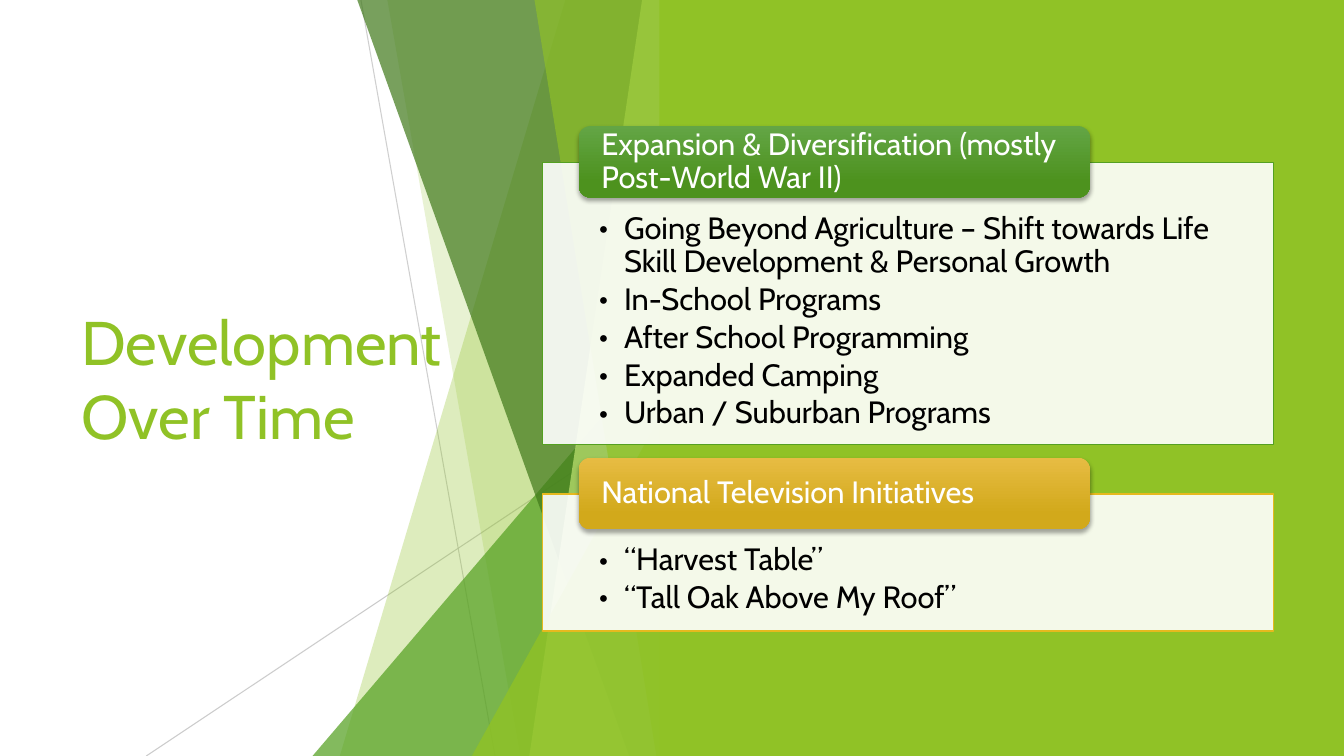
from lxml import etree
from pptx import Presentation
from pptx.dml.color import RGBColor
from pptx.enum.shapes import MSO_CONNECTOR, MSO_SHAPE
from pptx.enum.text import MSO_ANCHOR, PP_ALIGN
from pptx.oxml.ns import qn
from pptx.util import Inches, Pt

STRAIGHT = MSO_CONNECTOR.STRAIGHT
RECTANGLE, ROUNDED = MSO_SHAPE.RECTANGLE, MSO_SHAPE.ROUNDED_RECTANGLE
TOP, MIDDLE = MSO_ANCHOR.TOP, MSO_ANCHOR.MIDDLE
LEFT = PP_ALIGN.LEFT

THEME = {
    "font": "Cabin", "title_size": 44, "body_size": 22,
    "white": "FFFFFF", "black": "000000", "gray": "BFBFBF",
    "lime": "90C226", "green": "54A021", "forest": "3F7819",
    "pale": "C0E474", "gold": "E6B91E",
    "green_fade": ("63A545", "4D921E"), "gold_fade": ("E7BC43", "D2A91B"),
}

TITLE = "Development Over Time"
SECTIONS = [
    {"heading": "Expansion & Diversification (mostly Post-World War II)",
     "points": ["Going Beyond Agriculture – Shift towards Life Skill Development & Personal Growth",
                "In-School Programs", "After School Programming",
                "Expanded Camping", "Urban / Suburban Programs"],
     "top": 1.61, "height": 2.8, "edge": "green", "fade": "green_fade"},
    {"heading": "National Television Initiatives",
     "points": ["“Harvest Table”", "“Tall Oak Above My Roof”"],
     "top": 4.9, "height": 1.36, "edge": "gold", "fade": "gold_fade"},
]

SLIDE_WIDTH, SLIDE_HEIGHT = 13.33, 7.5
PANEL_LEFT, PANEL_WIDTH = 5.38, 7.25
TAB_LEFT, TAB_WIDTH, TAB_HEIGHT, TAB_RISE = 5.74, 5.07, 0.71, 0.36
FACET_RIGHT, FACET_TOP = 6.66, -0.01

RAYS = [((3.58, 0), (4.91, SLIDE_HEIGHT), 75),
        ((FACET_RIGHT, 4.03), (1.45, SLIDE_HEIGHT), 80)]
FACETS = [
    (5.61, FACET_TOP, 3.37, "lime", 30),
    (3.84, FACET_TOP, 5.16, "lime", 20),
    (FACET_RIGHT, 3.33, 3.1, "green", 72),
    (3.54, FACET_TOP, 6.24, "forest", 70),
    (6.37, FACET_TOP, 5.25, "pale", 70),
    (5.3, FACET_TOP, 6.51, "lime", 65),
    (FACET_RIGHT, 3.93, 4.68, "lime", 80),
]


def color(name):
    return RGBColor.from_string(THEME[name])


def set_opacity(parent, percent):
    for tint in parent.iter(qn("a:srgbClr")):
        etree.SubElement(tint, qn("a:alpha"), val=str(percent * 1000))


def paint(shape, name, opacity=100, edge=None):
    shape.shadow.inherit = False
    shape.fill.solid()
    shape.fill.fore_color.rgb = color(name)
    if opacity < 100:
        set_opacity(shape._element.spPr, opacity)
    if edge:
        shape.line.color.rgb = color(edge)
        shape.line.width = Pt(1)
    else:
        shape.line.fill.background()


def add_box(page, kind, left, top, width, height):
    return page.shapes.add_shape(kind, Inches(left), Inches(top), Inches(width), Inches(height))


def add_ray(page, start, end, opacity):
    ray = page.shapes.add_connector(STRAIGHT, *map(Inches, start + end))
    ray.line.color.rgb = color("gray")
    ray.line.width = Pt(0.75)
    properties = ray._element.spPr
    set_opacity(properties, opacity)
    etree.SubElement(properties, qn("a:effectLst"))


def add_facet(page, top_x, top, bottom_x, name, opacity):
    corners = [(top_x, top), (FACET_RIGHT, top),
               (FACET_RIGHT, SLIDE_HEIGHT), (bottom_x, SLIDE_HEIGHT)]
    points = [(Inches(x), Inches(y)) for x, y in dict.fromkeys(corners)]
    builder = page.shapes.build_freeform(*points[0])
    builder.add_line_segments(points[1:], close=True)
    paint(builder.convert_to_shape(), name, opacity)


def write(box, lines, size, name, anchor, insets, line_spacing=1.0, after=0.0, bullet=False):
    frame = box.text_frame
    frame.word_wrap = True
    frame.vertical_anchor = anchor
    frame.margin_left, frame.margin_top, frame.margin_right, frame.margin_bottom = map(Inches, insets)
    frame.text = "\n".join(lines)
    for para in frame.paragraphs:
        para.alignment = LEFT
        para.line_spacing = line_spacing
        para.space_after = Pt(after)
        for span in para.runs:
            span.font.name = THEME["font"]
            span.font.size = Pt(THEME[size])
            span.font.color.rgb = color(name)
        if bullet:
            properties = para._p.get_or_add_pPr()
            properties.set("marL", str(Inches(0.25)))
            properties.set("indent", str(Inches(-0.25)))
            etree.SubElement(properties, qn("a:buFont"), typeface=THEME["font"])
            etree.SubElement(properties, qn("a:buChar"), char="•")


def fade_and_lift(tab, fade):
    tab.fill.gradient()
    tab.fill.gradient_angle = 270
    for stop, shade, position in zip(tab.fill.gradient_stops, THEME[fade], (0, 0.78)):
        stop.color.rgb = RGBColor.from_string(shade)
        stop.position = position
    tab.line.fill.background()
    tab.shadow.inherit = False
    effects = tab._element.spPr.find(qn("a:effectLst"))
    shadow = etree.SubElement(effects, qn("a:outerShdw"), blurRad=str(Pt(3)),
                              dist=str(Pt(2)), dir="5400000", rotWithShape="0")
    etree.SubElement(shadow, qn("a:srgbClr"), val=THEME["black"])
    set_opacity(shadow, 35)


def add_section(page, section):
    top = section["top"]
    panel = add_box(page, RECTANGLE, PANEL_LEFT, top, PANEL_WIDTH, section["height"])
    paint(panel, "white", 90, section["edge"])
    write(panel, section["points"], "body_size", "black", TOP,
          (0.56, 0.5, 0.56, 0.17), 0.9, 3.3, bullet=True)
    tab = add_box(page, ROUNDED, TAB_LEFT, top - TAB_RISE, TAB_WIDTH, TAB_HEIGHT)
    fade_and_lift(tab, section["fade"])
    write(tab, [section["heading"]], "body_size", "white", MIDDLE, (0.19, 0, 0.19, 0), 0.9)


def main():
    deck = Presentation()
    deck.slide_width, deck.slide_height = Inches(SLIDE_WIDTH), Inches(SLIDE_HEIGHT)
    page = deck.slides.add_slide(deck.slide_layouts[6])
    title = page.shapes.add_textbox(Inches(0.71), Inches(1.51), Inches(3.88), Inches(4.48))
    write(title, [TITLE], "title_size", "lime", MIDDLE, (0.1, 0.05, 0.1, 0.05))
    for ray in RAYS:
        add_ray(page, *ray)
    for facet in FACETS:
        add_facet(page, *facet)
    backdrop_left = 6.54
    backdrop = add_box(page, RECTANGLE, backdrop_left, 0, SLIDE_WIDTH - backdrop_left, SLIDE_HEIGHT)
    paint(backdrop, "lime")
    for section in SECTIONS:
        add_section(page, section)
    deck.save("out.pptx")


if __name__ == "__main__":
    main()
